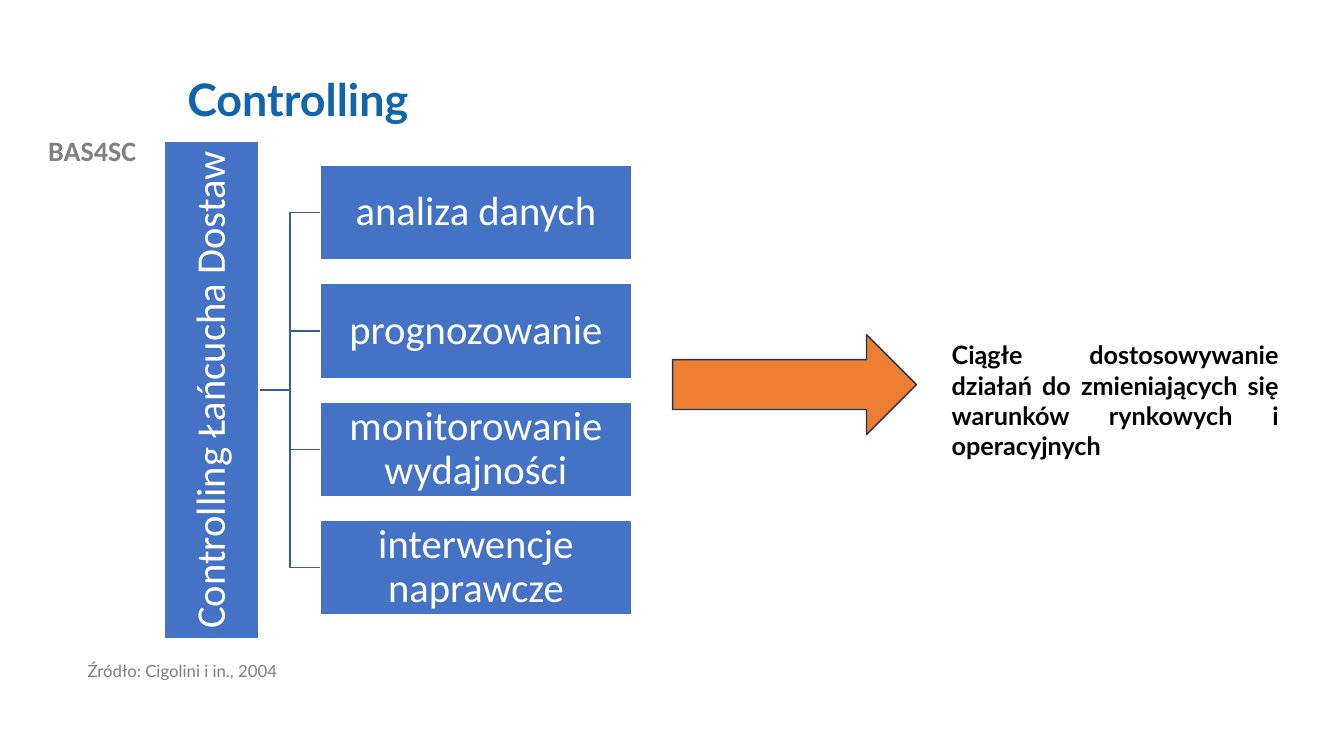
from dataclasses import dataclass
from typing import NamedTuple

from pptx import Presentation
from pptx import util as u
from pptx.dml.color import RGBColor
from pptx.enum import shapes, text


@dataclass(frozen=True)
class Theme:
    blue: str = "4472C4"
    link: str = "365B9D"
    head: str = "1065AB"
    gray: str = "808080"
    note: str = "7F7F7F"
    gold: str = "ED7D31"
    edge: str = "1E3256"
    white: str = "FFFFFF"
    black: str = "000000"
    sans: str = "Calibri"
    lato: str = "Lato"
    title: int = 32
    node: int = 29
    tag: int = 20
    body: int = 18
    small: int = 12


class Area(NamedTuple):
    """Left, top, width and height in percent of the slide."""
    x: float
    y: float
    w: float
    h: float


@dataclass(frozen=True)
class Label:
    words: str
    area: Area
    size: int
    color: str
    font: str
    bold: bool = True
    align: text.PP_ALIGN = text.PP_ALIGN.LEFT
    anchor: text.MSO_ANCHOR = text.MSO_ANCHOR.TOP
    lead: float = 1.0


T = Theme()
WIDE, HIGH = u.Inches(13.33), u.Inches(7.5)
CENTER, MIDDLE = text.PP_ALIGN.CENTER, text.MSO_ANCHOR.MIDDLE

# Tree: one root bar, then four boxes at an equal step
ROOT = Area(-2.78, 45.33, 37.06, 12.53)  # before its quarter turn
BOX = Area(23.86, 21.87, 23.11, 12.53)
STEP = 15.64
START, BEND, ROOT_Y = 19.28, 21.57, 51.6
ARROW = Area(50.04, 44.27, 18.15, 13.2)
TASKS = ["analiza danych", "prognozowanie",
         "monitorowanie wydajności", "interwencje naprawcze"]

LABELS = [
    Label("BAS4SC", Area(0, 17.07, 13.73, 5.87), T.tag, T.gray, T.sans,
          align=CENTER),
    Label("Controlling", Area(13.2, 5.33, 79.97, 16.27), T.title, T.head,
          T.lato, anchor=MIDDLE, lead=0.9),
    Label("Źródło: Cigolini i in., 2004", Area(5.78, 87.07, 37.58, 6.93),
          T.small, T.note, T.lato, bold=False, lead=0.9),
    Label("Ciągłe dostosowywanie działań do zmieniających się "
          "warunków rynkowych i operacyjnych",
          Area(70.07, 44.27, 25.81, 17.47), T.body, T.black, T.lato,
          align=text.PP_ALIGN.JUSTIFY),
]


def across(share: float) -> int:
    return round(WIDE * share / 100)


def down(share: float) -> int:
    return round(HIGH * share / 100)


def frame(area: Area) -> tuple[int, int, int, int]:
    return across(area.x), down(area.y), across(area.w), down(area.h)


def fill_text(shape, label: Label) -> None:
    box = shape.text_frame
    box.text = label.words
    box.word_wrap = True
    box.vertical_anchor = label.anchor
    line = box.paragraphs[0]
    line.alignment = label.align
    line.line_spacing = label.lead
    font = line.runs[0].font
    font.name, font.size, font.bold = label.font, u.Pt(label.size), label.bold
    font.color.rgb = RGBColor.from_string(label.color)


def stroke(shape, color: str) -> None:
    shape.shadow.inherit = False
    shape.line.color.rgb = RGBColor.from_string(color)
    shape.line.width = u.Pt(1)


def add_block(slide, kind: shapes.MSO_SHAPE, area: Area, fill: str, edge: str):
    shape = slide.shapes.add_shape(kind, *frame(area))
    shape.fill.solid()
    shape.fill.fore_color.rgb = RGBColor.from_string(fill)
    stroke(shape, edge)
    return shape


def add_node(slide, words: str, area: Area, turn: int = 0) -> None:
    node = add_block(slide, shapes.MSO_SHAPE.RECTANGLE, area, T.blue, T.white)
    node.rotation = turn
    fill_text(node, Label(words, area, T.node, T.white, T.sans, bold=False,
                          align=CENTER, anchor=MIDDLE, lead=0.9))
    box = node.text_frame
    box.margin_left = box.margin_right = u.Inches(0.02)
    box.margin_top = box.margin_bottom = u.Inches(0.02)


def add_branch(slide, end: float) -> None:
    pen = slide.shapes.build_freeform(across(START), down(ROOT_Y))
    points = [(BEND, ROOT_Y), (BEND, end), (BOX.x, end)]
    pen.add_line_segments([(across(x), down(y)) for x, y in points],
                          close=False)
    branch = pen.convert_to_shape()
    branch.fill.background()
    stroke(branch, T.link)


def main() -> None:
    deck = Presentation()
    deck.slide_width, deck.slide_height = WIDE, HIGH
    slide = deck.slides.add_slide(deck.slide_layouts[6])

    # Heading, tag, source and outcome
    for label in LABELS:
        fill_text(slide.shapes.add_textbox(*frame(label.area)), label)

    # Branches lie under the nodes
    areas = [BOX._replace(y=BOX.y + STEP * row) for row in range(len(TASKS))]
    for area in areas:
        add_branch(slide, area.y + area.h / 2)

    # Root bar and task boxes
    add_node(slide, "Controlling Łańcucha Dostaw", ROOT, turn=270)
    for words, area in zip(TASKS, areas):
        add_node(slide, words, area)

    # Arrow to the outcome
    add_block(slide, shapes.MSO_SHAPE.RIGHT_ARROW, ARROW, T.gold, T.edge)

    deck.save("out.pptx")


if __name__ == "__main__":
    main()
